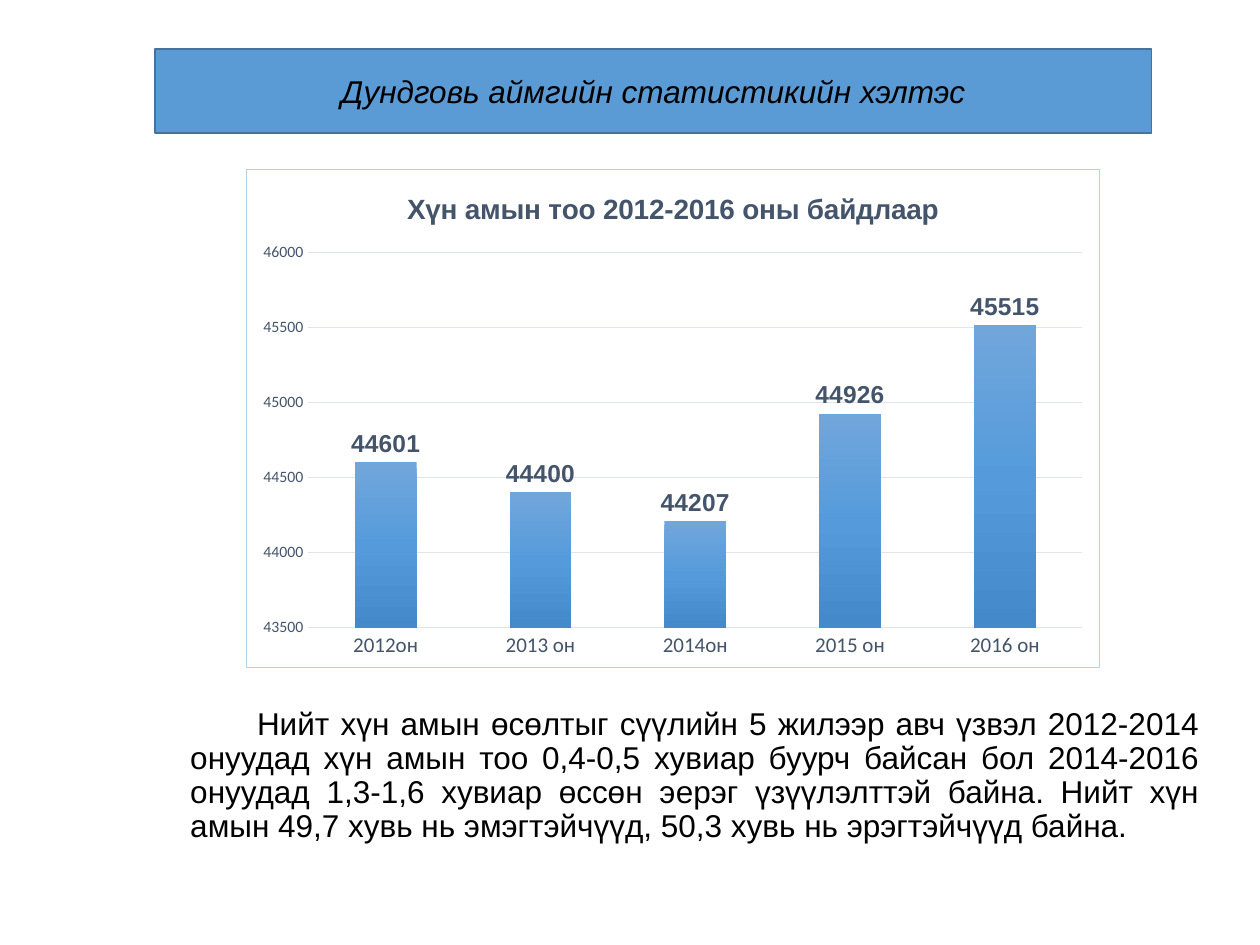
from copy import deepcopy
from dataclasses import dataclass

from pptx import Presentation
from pptx.chart.data import CategoryChartData
from pptx.dml.color import RGBColor
from pptx.enum.chart import XL_CHART_TYPE as ChartType
from pptx.enum.chart import XL_LABEL_POSITION as LabelPosition
from pptx.enum.chart import XL_TICK_MARK as TickMark
from pptx.enum.text import MSO_ANCHOR as Anchor
from pptx.enum.text import MSO_AUTO_SIZE as AutoSize
from pptx.enum.text import PP_ALIGN as Align
from pptx.oxml import parse_xml
from pptx.oxml.ns import nsdecls
from pptx.util import Inches, Pt

HEADING = "Дундговь аймгийн статистикийн хэлтэс"
CHART_TITLE = "Хүн амын тоо 2012-2016 оны байдлаар"
POPULATION = {
    "2012он": 44601,
    "2013 он": 44400,
    "2014он": 44207,
    "2015 он": 44926,
    "2016 он": 45515,
}
SUMMARY = (
    "Нийт хүн амын өсөлтыг сүүлийн 5 жилээр авч үзвэл 2012-2014 онуудад "
    "хүн амын тоо 0,4-0,5 хувиар буурч байсан бол 2014-2016 онуудад 1,3-1,6 "
    "хувиар өссөн эерэг үзүүлэлттэй байна. Нийт хүн амын 49,7 хувь нь "
    "эмэгтэйчүүд, 50,3 хувь нь эрэгтэйчүүд байна."
)


@dataclass(frozen=True)
class Theme:
    heading_font: str = "Arial"
    axis_font: str = "Calibri"
    ink: str = "000000"
    slate: str = "44546A"
    banner: str = "5B9BD5"
    banner_edge: str = "43739E"
    grid: str = "E0E5EB"
    frame: str = "B5D2EC"
    paper: str = "FFFFFF"
    bars: tuple = ("71A6DB", "559BDB", "448ACA")
    text_size: int = 18
    title_size: int = 16
    label_size: int = 14
    category_size: int = 12
    value_size: int = 9
    hairline: float = 0.75


THEME = Theme()
WIDTH, HEIGHT = Inches(10), Inches(7.5)
BANNER_AREA = (0.123, 0.052, 0.791, 0.089)
CHART_AREA = (0.195, 0.179, 0.678, 0.528)
SUMMARY_AREA = (0.141, 0.743, 0.821, 0.201)


def place(area):
    return [int(share * side) for share, side in zip(area, (WIDTH, HEIGHT) * 2)]


def set_font(font, size, color, name, bold=False, italic=False):
    font.size, font.name = Pt(size), name
    font.bold, font.italic = bold, italic
    font.color.rgb = RGBColor.from_string(color)


def set_line(line, color, width):
    line.color.rgb = RGBColor.from_string(color)
    line.width = Pt(width)


def fill_placeholder(box, area, text, align, anchor, italic=False):
    box.left, box.top, box.width, box.height = place(area)
    frame = box.text_frame
    frame.text, frame.word_wrap = text, True
    frame.auto_size, frame.vertical_anchor = AutoSize.NONE, anchor
    para = frame.paragraphs[0]
    para.alignment, para.space_before = align, Pt(0)
    set_font(para.font, THEME.text_size, THEME.ink, THEME.heading_font, italic=italic)
    return para


def style_axis(axis, size):
    axis.major_tick_mark = axis.minor_tick_mark = TickMark.NONE
    set_font(axis.tick_labels.font, size, THEME.slate, THEME.axis_font)


def frame_chart(chart):
    chart.element.find("{*}chart").addnext(parse_xml(
        f'<c:spPr {nsdecls("c", "a")}>'
        f'<a:solidFill><a:srgbClr val="{THEME.paper}"/></a:solidFill>'
        f'<a:ln w="{Pt(THEME.hairline)}"><a:solidFill>'
        f'<a:srgbClr val="{THEME.frame}"/></a:solidFill></a:ln></c:spPr>'
    ))


def shade_bars(series):
    fill = series.format.fill
    fill.gradient()
    fill.gradient_angle = 270
    stop_list = series._element.xpath(".//a:gsLst")[0]
    stop_list.insert(1, deepcopy(stop_list[0]))
    for index, (stop, color) in enumerate(zip(fill.gradient_stops, THEME.bars)):
        stop.position = index / (len(THEME.bars) - 1)
        stop.color.rgb = RGBColor.from_string(color)


def add_population_chart(page):
    data = CategoryChartData(number_format="General")
    data.categories = list(POPULATION)
    data.add_series("Series 1", list(POPULATION.values()))
    chart = page.shapes.add_chart(
        ChartType.COLUMN_CLUSTERED, *place(CHART_AREA), data
    ).chart
    frame_chart(chart)
    set_font(chart.font, 10, THEME.ink, THEME.axis_font)
    chart.has_legend = False

    title = chart.chart_title
    title.text_frame.text = CHART_TITLE
    title.include_in_layout = False
    set_font(title.text_frame.paragraphs[0].font, THEME.title_size,
             THEME.slate, THEME.heading_font, bold=True)

    categories, values = chart.category_axis, chart.value_axis
    style_axis(categories, THEME.category_size)
    style_axis(values, THEME.value_size)
    set_line(categories.format.line, THEME.grid, THEME.hairline)
    set_line(values.major_gridlines.format.line, THEME.grid, THEME.hairline)
    values.format.line.fill.background()
    values.minimum_scale, values.maximum_scale, values.major_unit = 43500, 46000, 500

    plot = chart.plots[0]
    plot.gap_width, plot.vary_by_categories = 150, False
    shade_bars(plot.series[0])
    labels = plot.series[0].data_labels
    labels.show_value, labels.position = True, LabelPosition.OUTSIDE_END
    set_font(labels.font, THEME.label_size, THEME.slate, THEME.heading_font, bold=True)


def main():
    deck = Presentation()
    deck.slide_width, deck.slide_height = WIDTH, HEIGHT
    page = deck.slides.add_slide(deck.slide_layouts[0])
    banner, summary = page.placeholders

    fill_placeholder(banner, BANNER_AREA, HEADING, Align.CENTER, Anchor.MIDDLE, italic=True)
    banner.fill.solid()
    banner.fill.fore_color.rgb = RGBColor.from_string(THEME.banner)
    set_line(banner.line, THEME.banner_edge, 1)

    add_population_chart(page)

    para = fill_placeholder(summary, SUMMARY_AREA, SUMMARY, Align.JUSTIFY, Anchor.TOP)
    para.line_spacing = 0.9
    para._p.get_or_add_pPr().set("indent", str(Inches(0.53)))
    deck.save("out.pptx")


if __name__ == "__main__":
    main()
